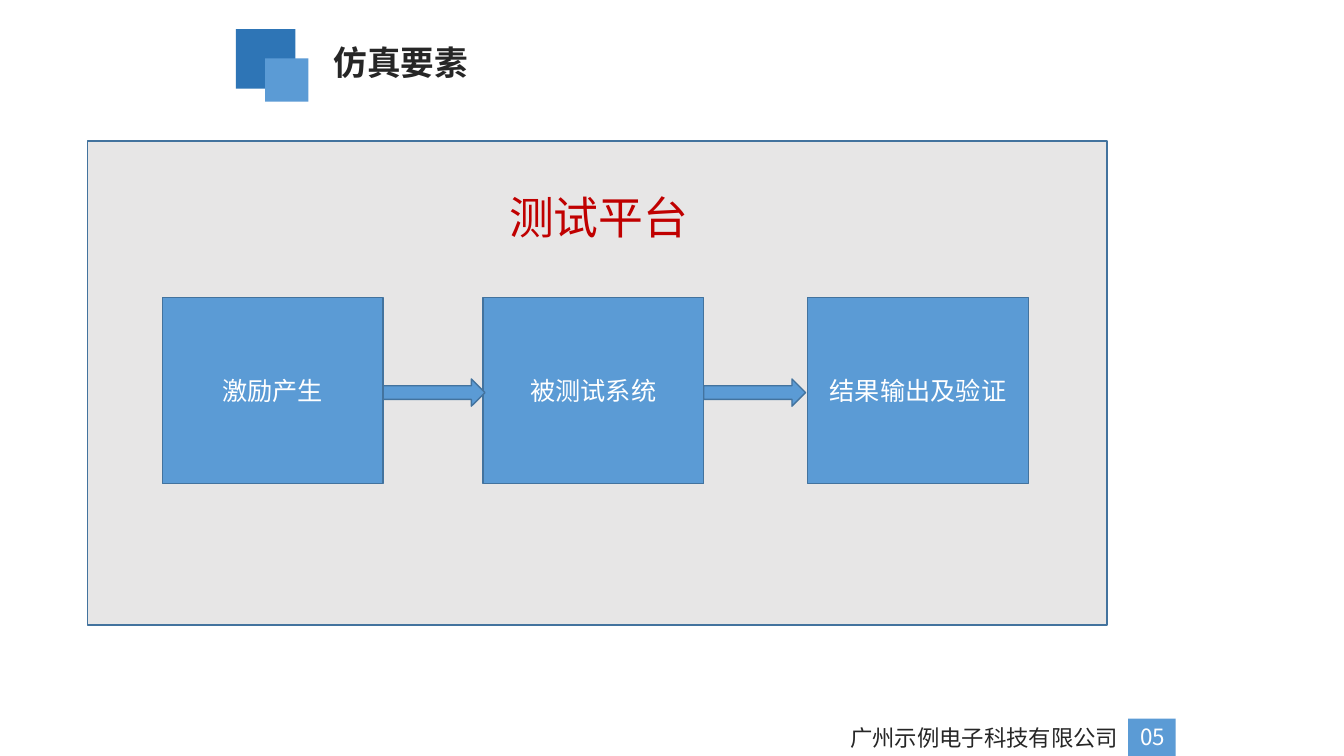
from lxml.etree import SubElement
from pptx import Presentation
from pptx.dml.color import RGBColor
from pptx.enum.shapes import MSO_SHAPE as Shape
from pptx.enum.text import MSO_ANCHOR as Anchor, MSO_AUTO_SIZE as AutoSize, PP_ALIGN as Align
from pptx.oxml.ns import qn
from pptx.util import Inches, Pt

COLORS = {
    "panel": "E7E6E6",
    "blue": "5B9BD5",
    "deep_blue": "2E75B6",
    "outline": "43739E",
    "ink": "262626",
    "red": "C00000",
    "white": "FFFFFF",
}
CJK_FONT = "Noto Sans CJK SC"
STAGES = [(1.61, "激励产生"), (4.79, "被测试系统"), (8.01, "结果输出及验证")]
STAGE_TOP, STAGE_WIDTH, STAGE_HEIGHT = 2.95, 2.19, 1.85
ARROW_TOP, ARROW_WIDTH, ARROW_HEIGHT = 3.76, 1.01, 0.27


def color(name):
    """Return the named colour of the palette."""
    return RGBColor.from_string(COLORS[name])


def write(shape, text, size, ink, font="Calibri", align=Align.CENTER, anchor=Anchor.MIDDLE, bold=False):
    """Put one formatted line of text in a shape."""
    frame = shape.text_frame
    frame.text = text
    frame.word_wrap = True
    frame.auto_size = AutoSize.NONE
    frame.vertical_anchor = anchor
    paragraph = frame.paragraphs[0]
    paragraph.alignment = align
    run = paragraph.runs[0]
    run.font.name = font
    run.font.size = Pt(size)
    run.font.bold = bold
    run.font.color.rgb = color(ink)
    SubElement(run.font._element, qn("a:ea")).set("typeface", font)


def add_block(slide, box, fill, outlined=False, kind=Shape.RECTANGLE):
    """Add a flat filled shape, with or without an outline."""
    shape = slide.shapes.add_shape(kind, *map(Inches, box))
    shape.shadow.inherit = False
    shape.fill.solid()
    shape.fill.fore_color.rgb = color(fill)
    if outlined:
        shape.line.color.rgb = color("outline")
        shape.line.width = Pt(1)
    else:
        shape.line.fill.background()
    return shape


def add_label(slide, box, text, ink, align):
    """Add a footer text box."""
    label = slide.shapes.add_textbox(*map(Inches, box))
    write(label, text, 16, ink, CJK_FONT, align, Anchor.TOP)


def add_heading(slide):
    """Add the two squares and the slide title."""
    add_block(slide, (2.34, 0.29, 0.59, 0.59), "deep_blue")
    add_block(slide, (2.63, 0.58, 0.43, 0.43), "blue")
    title = slide.shapes.title
    title.left, title.top, title.width, title.height = map(Inches, (3.21, 0.37, 7.78, 0.91))
    write(title, "仿真要素", 24, "ink", CJK_FONT, Align.LEFT, Anchor.TOP, True)


def add_footer(slide):
    """Add the company name and the page number."""
    add_block(slide, (11.19, 7.13, 0.47, 0.37), "blue")
    add_label(slide, (11.08, 7.13, 0.7, 0.37), "05", "white", Align.CENTER)
    add_label(slide, (3, 7.13, 8.19, 0.39), "广州示例电子科技有限公司", "ink", Align.RIGHT)


def add_flow(slide):
    """Add the stages and the arrows that lead from each to the next."""
    for left, text in STAGES:
        stage = add_block(slide, (left, STAGE_TOP, STAGE_WIDTH, STAGE_HEIGHT), "blue", True)
        write(stage, text, 18, "white")
    for left, _ in STAGES[:-1]:
        box = (left + STAGE_WIDTH, ARROW_TOP, ARROW_WIDTH, ARROW_HEIGHT)
        add_block(slide, box, "blue", True, Shape.RIGHT_ARROW)


def main():
    """Build and save the slide."""
    presentation = Presentation()
    presentation.slide_width = Inches(13.33)
    presentation.slide_height = Inches(7.5)
    slide = presentation.slides.add_slide(presentation.slide_layouts[5])
    add_block(slide, (0.87, 1.4, 10.11, 4.8), "panel", True)
    add_heading(slide)
    add_footer(slide)
    add_flow(slide)
    platform = add_block(slide, (4.53, 1.67, 2.82, 0.95), "panel")
    write(platform, "测试平台", 32, "red")
    presentation.save("out.pptx")


if __name__ == "__main__":
    main()
